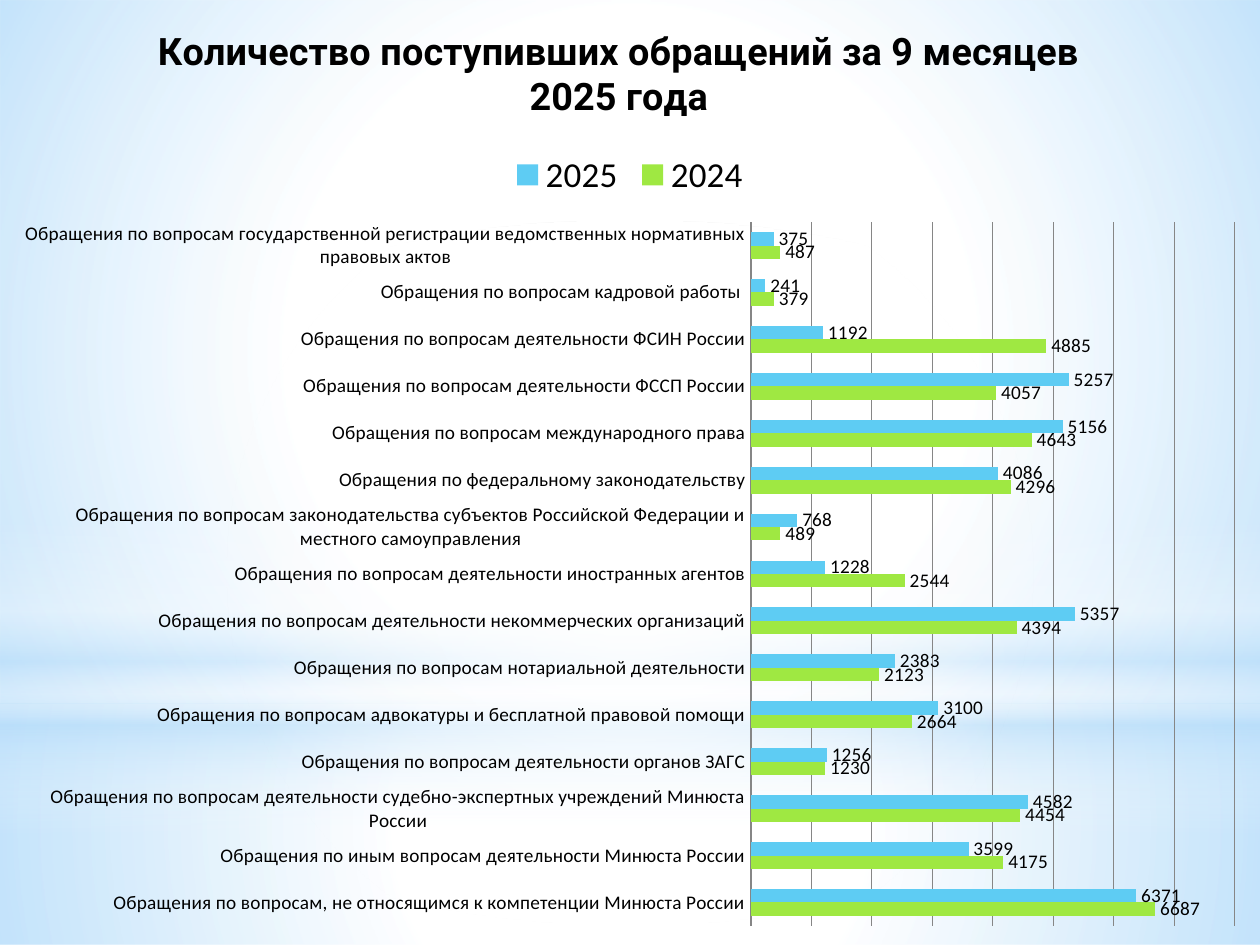
"""Build a slide with a bar chart of appeals received in nine months of 2025."""
import pptx
import pptx.chart.data
import pptx.dml.color
import pptx.enum.chart
import pptx.enum.shapes
import pptx.oxml
import pptx.oxml.ns
import pptx.util

Pt = pptx.util.Pt
RGBColor = pptx.dml.color.RGBColor
qn = pptx.oxml.ns.qn
SHAPE = pptx.enum.shapes.MSO_SHAPE
CHART = pptx.enum.chart

WHITE = RGBColor(0xFF, 0xFF, 0xFF)
PALE_BLUE = RGBColor(0xB4, 0xDC, 0xFA)
BLUE = RGBColor(0x5E, 0xCC, 0xF3)
GREEN = RGBColor(0x9F, 0xE8, 0x42)
GRAY = RGBColor(0x86, 0x86, 0x86)
BLACK = RGBColor(0, 0, 0)
RADIAL = '<a:path path="circle"><a:fillToRect l="50000" t="50000" r="50000" b="50000"/></a:path>'
LINEAR = '<a:lin ang="5400000" scaled="0"/>'


def set_gradient(s, stops, direction):
    s.fill.gradient()
    old = s.element.spPr.find(qn("a:gradFill"))
    gs = "".join(
        f'<a:gs pos="{pos * 1000}"><a:srgbClr val="{color}">'
        f'<a:alpha val="{alpha * 1000}"/></a:srgbClr></a:gs>'
        for pos, color, alpha in stops)
    ns = pptx.oxml.ns.nsdecls("a")
    new = pptx.oxml.parse_xml(
        f'<a:gradFill {ns} rotWithShape="1"><a:gsLst>{gs}</a:gsLst>{direction}</a:gradFill>')
    old.getparent().replace(old, new)


def set_layout(element, before, box, inner=False):
    for old in element.findall(qn("c:layout")):
        element.remove(old)
    target = '<c:layoutTarget val="inner"/>' if inner else ""
    modes = '<c:xMode val="edge"/><c:yMode val="edge"/>'
    sizes = "".join(f'<c:{k} val="{v}"/>' for k, v in zip("xywh", box))
    ns = pptx.oxml.ns.nsdecls("c")
    layout = pptx.oxml.parse_xml(
        f'<c:layout {ns}><c:manualLayout>{target}{modes}{sizes}</c:manualLayout></c:layout>')
    element.find(qn(before)).addprevious(layout)


prs = pptx.Presentation()
prs.slide_width, prs.slide_height = Pt(720), Pt(540)
slide = prs.slides.add_slide(prs.slide_layouts[6])
slide.background.fill.solid()
slide.background.fill.fore_color.rgb = WHITE

backdrop = [
    (SHAPE.RECTANGLE, 402, 138, RADIAL,
     [(0, WHITE, 91), (37, WHITE, 76), (100, PALE_BLUE, 79)]),
    (SHAPE.RECTANGLE, 0, 402, RADIAL,
     [(0, WHITE, 89), (48, WHITE, 62), (100, PALE_BLUE, 79)]),
    (SHAPE.RECTANGLE, 297, 180, LINEAR,
     [(0, WHITE, 0), (29, WHITE, 30), (45, PALE_BLUE, 40),
      (55, WHITE, 26), (65, PALE_BLUE, 60), (100, WHITE, 0)]),
    (SHAPE.OVAL, 126, 402, RADIAL, [(0, WHITE, 100), (56, WHITE, 0)]),
]
for kind, top, height, direction, stops in backdrop:
    s = slide.shapes.add_shape(kind, 0, Pt(top), Pt(720), Pt(height))
    s.shadow.inherit = False
    s.line.fill.background()
    set_gradient(s, stops, direction)

appeals = [
    ("Обращения по вопросам, не относящимся к компетенции Минюста России", 6687, 6371),
    ("Обращения по иным вопросам деятельности Минюста России", 4175, 3599),
    ("Обращения по вопросам деятельности судебно-экспертных учреждений Минюста России", 4454, 4582),
    ("Обращения по вопросам деятельности органов ЗАГС", 1230, 1256),
    ("Обращения по вопросам адвокатуры и бесплатной правовой помощи", 2664, 3100),
    ("Обращения по вопросам нотариальной деятельности", 2123, 2383),
    ("Обращения по вопросам деятельности некоммерческих организаций", 4394, 5357),
    ("Обращения по вопросам деятельности иностранных агентов", 2544, 1228),
    ("Обращения по вопросам законодательства субъектов Российской Федерации "
     "и местного самоуправления", 489, 768),
    ("Обращения по федеральному законодательству", 4296, 4086),
    ("Обращения по вопросам международного права", 4643, 5156),
    ("Обращения по вопросам деятельности ФССП России", 4057, 5257),
    ("Обращения по вопросам деятельности ФСИН России", 4885, 1192),
    ("Обращения по вопросам кадровой работы ", 379, 241),
    ("Обращения по вопросам государственной регистрации ведомственных "
     "нормативных правовых актов", 487, 375),
]
categories, values_2024, values_2025 = zip(*appeals)
data = pptx.chart.data.CategoryChartData()
data.categories = categories
data.add_series("2024", values_2024)
data.add_series("2025", values_2025)
chart = slide.shapes.add_chart(
    CHART.XL_CHART_TYPE.BAR_CLUSTERED, 0, 0, Pt(720), Pt(540), data).chart

chart.has_title = True
tf = chart.chart_title.text_frame
p = tf.paragraphs[0]
r = p.add_run()
r.text = "Количество поступивших обращений за 9 месяцев 2025 года"
chart.chart_title.include_in_layout = False

chart.has_legend = True
legend = chart.legend
plot = chart.plots[0]
plot.has_data_labels = True
labels = plot.data_labels
cat_axis, val_axis = chart.category_axis, chart.value_axis
NO_TICK = CHART.XL_TICK_MARK.NONE
settings = [
    (legend, {"position": CHART.XL_LEGEND_POSITION.TOP, "include_in_layout": False}),
    (plot, {"gap_width": 150, "overlap": 0, "vary_by_categories": False}),
    (labels, {"show_value": True, "position": CHART.XL_LABEL_POSITION.OUTSIDE_END}),
    (cat_axis, {"major_tick_mark": NO_TICK, "minor_tick_mark": NO_TICK}),
    (val_axis, {"visible": False, "has_major_gridlines": True, "minimum_scale": 0,
                "maximum_scale": 8000, "major_unit": 1000}),
    (chart.font, {"name": "Roboto", "size": Pt(18)}),
    (r.font, {"name": "Roboto", "size": Pt(21.6), "bold": True}),
    (legend.font, {"name": "Calibri", "size": Pt(20)}),
    (labels.font, {"name": "Calibri", "size": Pt(11)}),
    (cat_axis.tick_labels.font, {"name": "Calibri", "size": Pt(11)}),
]
for target, values in settings:
    for name, value in values.items():
        setattr(target, name, value)

for font in (chart.font, r.font, legend.font, labels.font, cat_axis.tick_labels.font):
    font.color.rgb = BLACK
for line in (cat_axis.format.line, val_axis.major_gridlines.format.line):
    line.color.rgb = GRAY
    line.width = Pt(0.75)
for series, color in zip(plot.series, (GREEN, BLUE)):
    series.format.fill.solid()
    series.format.fill.fore_color.rgb = color
    series.invert_if_negative = False

plot_area = chart.element.find(".//" + qn("c:plotArea"))
set_layout(plot_area, "c:barChart", (0.596, 0.235, 0.384, 0.745), inner=True)
set_layout(chart.chart_title.element if hasattr(chart.chart_title, "element")
           else chart.element.find(".//" + qn("c:title")), "c:overlay", (0.12, 0.02))
set_layout(chart.element.find(".//" + qn("c:legend")), "c:overlay", (0.4, 0.16, 0.2, 0.05))

prs.save("out.pptx")
